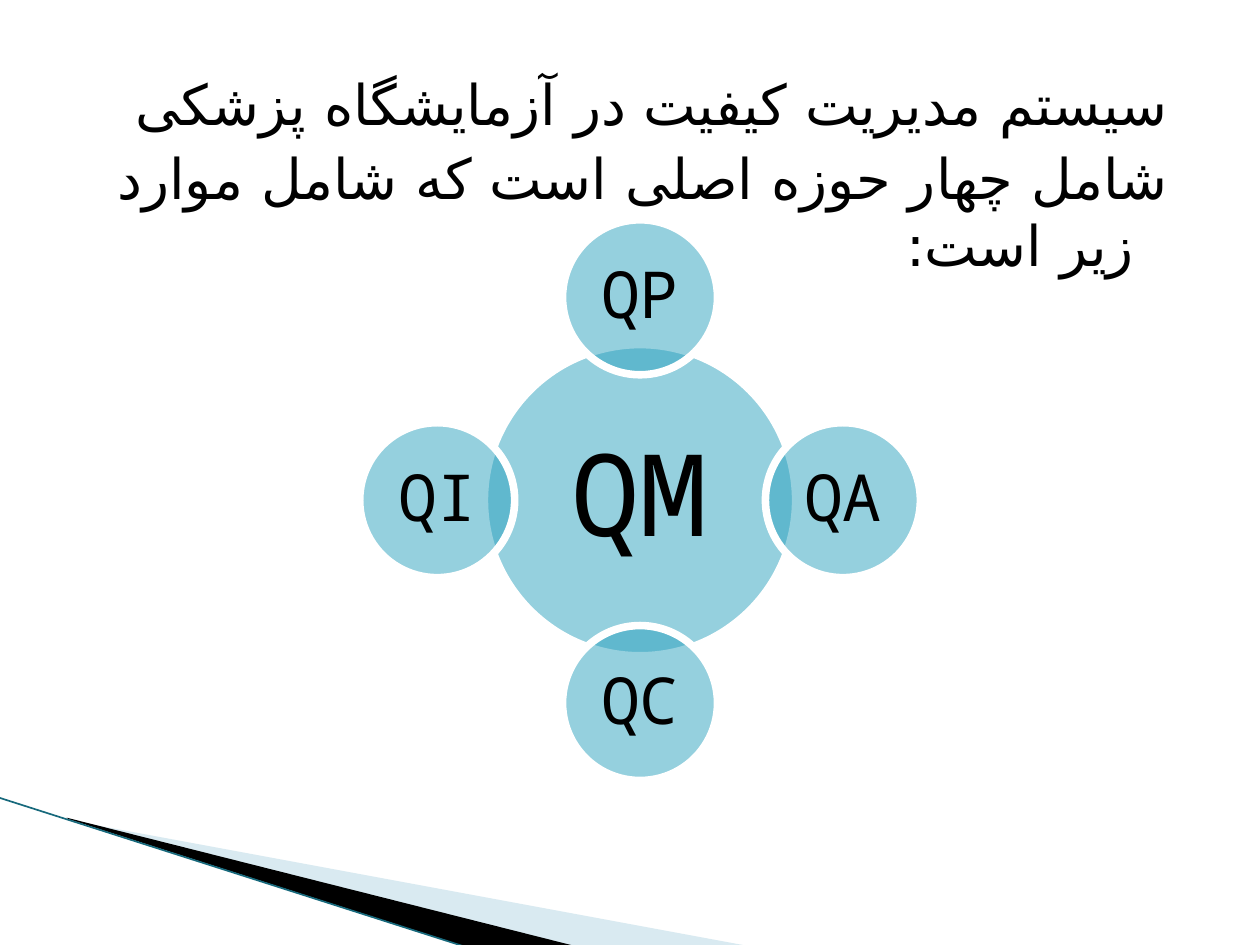
import pptx
import pptx.dml.color
import pptx.enum.shapes
import pptx.enum.text
import pptx.oxml
import pptx.oxml.ns
import pptx.util

Inches = pptx.util.Inches
Pt = pptx.util.Pt
Align = pptx.enum.text.PP_ALIGN
Anchor = pptx.enum.text.MSO_ANCHOR
qn = pptx.oxml.ns.qn


def color(text):
    return pptx.dml.color.RGBColor.from_string(text)


def add(parent, tag, **attrs):
    node = parent.makeelement(qn(tag), attrs)
    parent.append(node)
    return node


def assign(target, values):
    for name, value in values.items():
        setattr(target, name, value)


class Painter:
    face = "Noto Sans Mono"
    script = "DejaVu Sans"  # Persian letters
    ink = "000000"
    white = "FFFFFF"
    teal = "2DA2BF"

    def __init__(self, slide):
        self.slide = slide
        self.shapes = slide.shapes

    def font(self, font, size):
        assign(font, {"size": Pt(size), "name": self.face})
        font.color.rgb = color(self.ink)

    def paint(self, shape, fill, alpha=100):
        shape.shadow.inherit = False
        shape.fill.solid()
        shape.fill.fore_color.rgb = color(fill)
        if alpha < 100:
            tint = shape.fill._xPr.find(".//" + qn("a:srgbClr"))
            add(tint, "a:alpha", val=str(alpha * 1000))

    def wedge(self, points, fill, alpha=100):
        first, *rest = [(Inches(x), Inches(y)) for x, y in points]
        build = self.shapes.build_freeform(*first)
        build.add_line_segments(rest, close=True)
        shape = build.convert_to_shape()
        self.paint(shape, fill, alpha)
        shape.line.fill.background()

    def line(self, start, end, hue, width):
        ends = [Inches(v) for v in (*start, *end)]
        line = self.shapes.add_connector(
            pptx.enum.shapes.MSO_CONNECTOR.STRAIGHT, *ends)
        line.line.color.rgb = color(hue)
        line.line.width = Pt(width)
        add(line._element.spPr, "a:effectLst")

    def disc(self, text, x, y, width, size, inset):
        box = (x - width / 2, y - width / 2, width, width)
        shape = self.shapes.add_shape(
            pptx.enum.shapes.MSO_SHAPE.OVAL, *[Inches(v) for v in box])
        self.paint(shape, self.teal, 50)
        shape.line.color.rgb = color(self.white)
        shape.line.width = Pt(4.33)
        frame = shape.text_frame
        assign(frame, {"word_wrap": True, "vertical_anchor": Anchor.MIDDLE})
        for side in ("left", "top", "right", "bottom"):
            setattr(frame, "margin_" + side, Inches(inset))
        para = frame.paragraphs[0]
        assign(para, {"text": text, "alignment": Align.CENTER,
                      "line_spacing": 0.9})
        self.font(para.runs[0].font, size)

    def body(self, lines, box, size):
        holder = self.slide.placeholders[1]
        names = ("left", "top", "width", "height")
        assign(holder, dict(zip(names, map(Inches, box))))
        frame = holder.text_frame
        assign(frame, {"word_wrap": True, "vertical_anchor": Anchor.TOP,
                       "auto_size": pptx.enum.text.MSO_AUTO_SIZE.NONE})
        for i, text in enumerate(lines):
            para = frame.add_paragraph() if i else frame.paragraphs[0]
            assign(para, {"text": text, "alignment": Align.RIGHT,
                          "space_before": Pt(4 if i else 0)})
            props = para._p.get_or_add_pPr()
            for name, value in {"marL": Inches(0.4), "indent": Inches(-0.28),
                                "rtl": 1}.items():
                props.set(name, str(value))
            add(props, "a:buNone")
            run = para.runs[0]
            self.font(run.font, size)
            add(run._r.get_or_add_rPr(), "a:cs", typeface=self.script)


def main():
    deck = pptx.Presentation()
    assign(deck, {"slide_width": Inches(10), "slide_height": Inches(7.5)})
    slide = deck.slides.add_slide(deck.slide_layouts[1])
    title = slide.shapes.title._element
    title.getparent().remove(title)
    page = Painter(slide)

    # Corner wedges
    page.wedge([(0.55, 6.51), (5.95, 7.51), (4.56, 7.51), (0.55, 6.5)],
               "A0CBDC", 40)
    page.wedge([(0.53, 6.49), (4.57, 7.51), (3.72, 7.52), (0.54, 6.5)],
               page.ink)
    page.line((-0.01, 6.33), (3.71, 7.52), "17697C", 0.95)

    # Introduction
    page.body(["سیستم مدیریت کیفیت در آزمایشگاه پزشکی",
               "شامل چهار حوزه اصلی است که شامل موارد زیر است:"],
              (0.5, 0.5, 9, 6.07), 32)

    # Hub with four areas around it
    x, y, reach = 5.08, 3.97, 1.61
    page.disc("QM", x, y, 2.47, 65, 0.09)
    areas = {"QP": (0, -1), "QA": (1, 0), "QC": (0, 1), "QI": (-1, 0)}
    for name, (dx, dy) in areas.items():
        page.disc(name, x + dx * reach, y + dy * reach, 1.23, 37, 0.05)

    deck.save("out.pptx")


if __name__ == "__main__":
    main()
